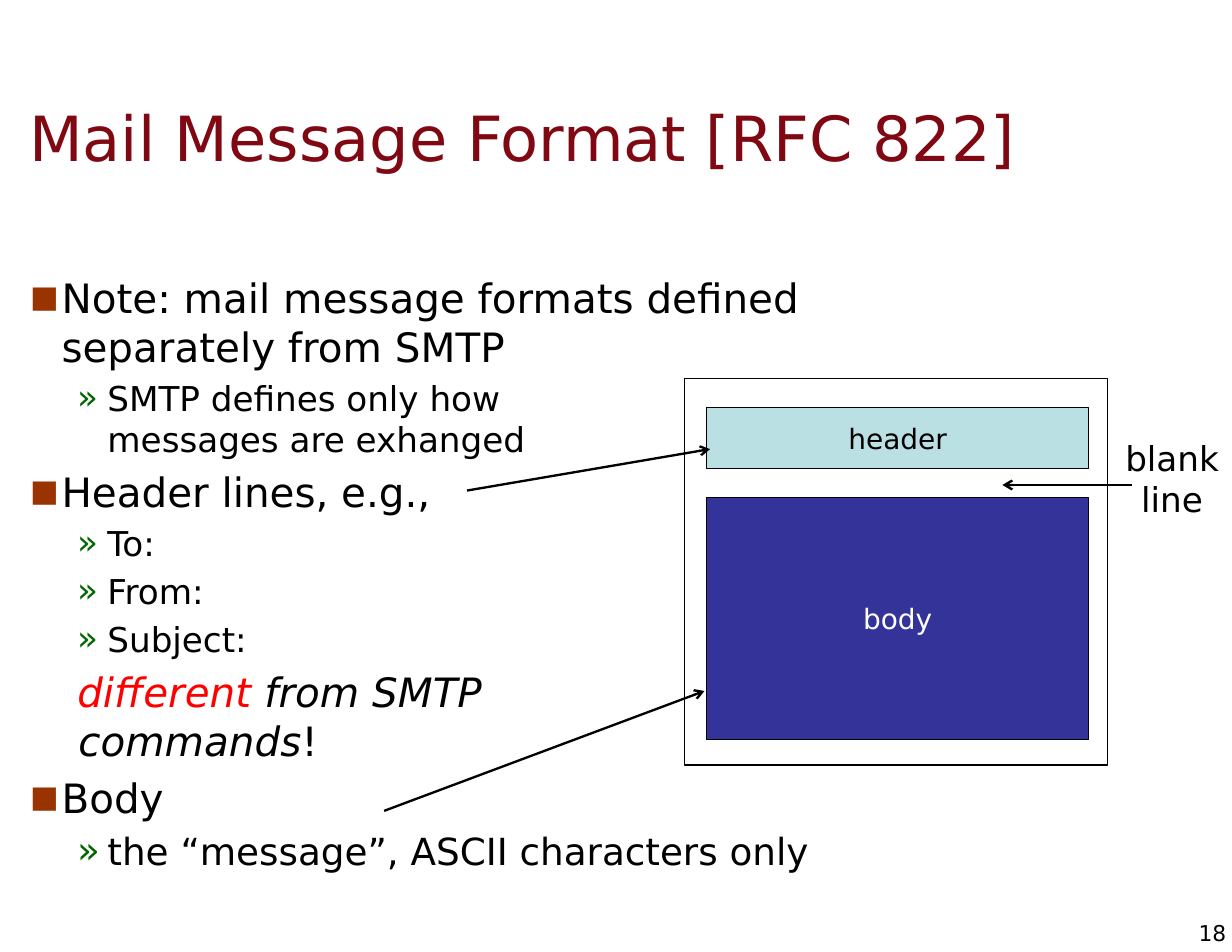
from lxml import etree
from pptx import Presentation
from pptx.dml.color import RGBColor
from pptx.enum.shapes import MSO_CONNECTOR, MSO_SHAPE
from pptx.enum.text import MSO_ANCHOR, PP_ALIGN
from pptx.oxml.ns import qn
from pptx.util import Inches, Pt

LEFT, MID, RIGHT = PP_ALIGN.LEFT, PP_ALIGN.CENTER, PP_ALIGN.RIGHT
TOP, HALF = MSO_ANCHOR.TOP, MSO_ANCHOR.MIDDLE
RECT, LINE = MSO_SHAPE.RECTANGLE, MSO_CONNECTOR.STRAIGHT

FONT = "DejaVu Sans"
HUE = {"title": "7F0813", "ink": "000000", "white": "FFFFFF", "red": "FF0000",
       "square": "993300", "chevron": "006600", "head": "BBE0E3", "body": "333399"}
COLS, ROWS = 44, 34  # grid cells are a quarter inch square
CELL = Inches(0.25)

# style: level, left margin, hanging indent (cells), mark, mark colour, mark size %
STYLES = {"main": (0, 1.68, -1.12, "■", "square", 75),
          "sub": (1, 3.32, -1.08, "»", "chevron", 100),
          "plain": (1, 2.28, -0.04, None, None, None)}

# style, runs of (text, size, colour, italic)
POINTS = [
    ("main", [("Note: mail message formats defined separately from SMTP", 26, "ink", False)]),
    ("sub", [("SMTP defines only how \nmessages are exhanged", 22, "ink", False)]),
    ("main", [("Header lines, e.g.,", 26, "ink", False)]),
    ("sub", [("To:", 22, "ink", False)]),
    ("sub", [("From:", 22, "ink", False)]),
    ("sub", [("Subject:", 22, "ink", False)]),
    ("plain", [("different ", 26, "red", True),
               ("from SMTP \ncommands", 26, "ink", True),
               ("!", 26, "ink", False)]),
    ("main", [("Body", 26, "ink", False)]),
    ("sub", [("the “message”, ASCII characters only", 24, "ink", False)]),
]

# place (column, row, columns, rows), text, size, colour, alignment, anchor, wrap, padded
LABELS = [
    ((0.6, 2.8, 42.12, 4.16), "Mail Message Format [RFC 822]", 40, "title", LEFT, HALF, True, True),
    ((39.72, 15.36, 4.28, 3.4), "blank\nline", 22, "ink", MID, TOP, False, True),
    ((42.44, 32.84, 1.36, 0.96), "18", 14, "ink", RIGHT, HALF, False, False),
]
LIST = (0.08, 9.52, 31.76, 23.64)

# place, fill, line width, text, text colour
BOXES = [
    ((25.24, 14.56, 13.64, 2.16), "head", 0.75, "header", "ink"),
    ((25.24, 17.76, 13.64, 8.64), "body", 0.75, "body", "white"),
    ((24.44, 13.52, 15.12, 13.8), None, 1, "", "ink"),
]

# start column, start row, end column, end row
ARROWS = [(16.68, 17.52, 25.36, 16.04),
          (13.72, 28.96, 25.16, 24.68),
          (40.44, 17.32, 35.8, 17.32)]


def grid(cells):
    return [round(n * CELL) for n in cells]


def tint(name):
    return RGBColor.from_string(HUE[name])


def node(root, tag, **atts):
    return etree.SubElement(root, qn(tag), atts)


def write(para, text, size, hue, slant=False):
    """Add a run for each line of the text, with breaks between."""
    for i, part in enumerate(text.split("\n")):
        if i:
            para.add_line_break()
        run = para.add_run()
        run.text = part
        font = run.font
        font.name, font.size, font.italic = FONT, Pt(size), slant
        font.color.rgb = tint(hue)


def frame(shape, anchor, wrap, pad=True):
    box = shape.text_frame
    box.word_wrap, box.vertical_anchor = wrap, anchor
    box.margin_left = box.margin_right = Inches(0.11 if pad else 0)
    box.margin_top = box.margin_bottom = Inches(0.06 if pad else 0)
    return box


def mark(para, style, first):
    """Set level, indents, space before and bullet."""
    level, left, hang, char, hue, size = STYLES[style]
    para.level = level
    props = para._p.get_or_add_pPr()
    props.set("marL", str(round(left * CELL)))
    props.set("indent", str(round(hang * CELL)))
    if not first:
        node(node(props, "a:spcBef"), "a:spcPct", val="20000")
    if not char:
        node(props, "a:buNone")
        return
    node(node(props, "a:buClr"), "a:srgbClr", val=HUE[hue])
    node(props, "a:buSzPct", val=str(size * 1000))
    node(props, "a:buFont", typeface=FONT)
    node(props, "a:buChar", char=char)


def label(shapes, place, text, size, hue, align, anchor, wrap, pad):
    para = frame(shapes.add_textbox(*grid(place)), anchor, wrap, pad).paragraphs[0]
    para.alignment = align
    write(para, text, size, hue)


def points(shapes):
    box = frame(shapes.add_textbox(*grid(LIST)), TOP, True)
    for i, (style, runs) in enumerate(POINTS):
        para = box.add_paragraph() if i else box.paragraphs[0]
        mark(para, style, i == 0)
        for run in runs:
            write(para, *run)


def block(shapes, place, fill, width, text, hue):
    shape = shapes.add_shape(RECT, *grid(place))
    shape.shadow.inherit = False
    if fill:
        shape.fill.solid()
        shape.fill.fore_color.rgb = tint(fill)
    else:
        shape.fill.background()
    shape.line.color.rgb, shape.line.width = tint("ink"), Pt(width)
    if text:
        para = frame(shape, HALF, False).paragraphs[0]
        para.alignment = MID
        write(para, text, 18, hue)


def arrow(shapes, ends):
    line = shapes.add_connector(LINE, *grid(ends))
    line.line.color.rgb, line.line.width = tint("ink"), Pt(1.5)
    node(line.line._get_or_add_ln(), "a:tailEnd", type="arrow")
    node(line._element.spPr, "a:effectLst")


def main():
    deck = Presentation()
    deck.slide_width, deck.slide_height = COLS * CELL, ROWS * CELL
    shapes = deck.slides.add_slide(deck.slide_layouts[6]).shapes
    title, *notes = LABELS
    label(shapes, *title)
    points(shapes)
    for box in BOXES:
        block(shapes, *box)
    for ends in ARROWS:
        arrow(shapes, ends)
    for note in notes:
        label(shapes, *note)
    deck.save("out.pptx")


if __name__ == "__main__":
    main()
